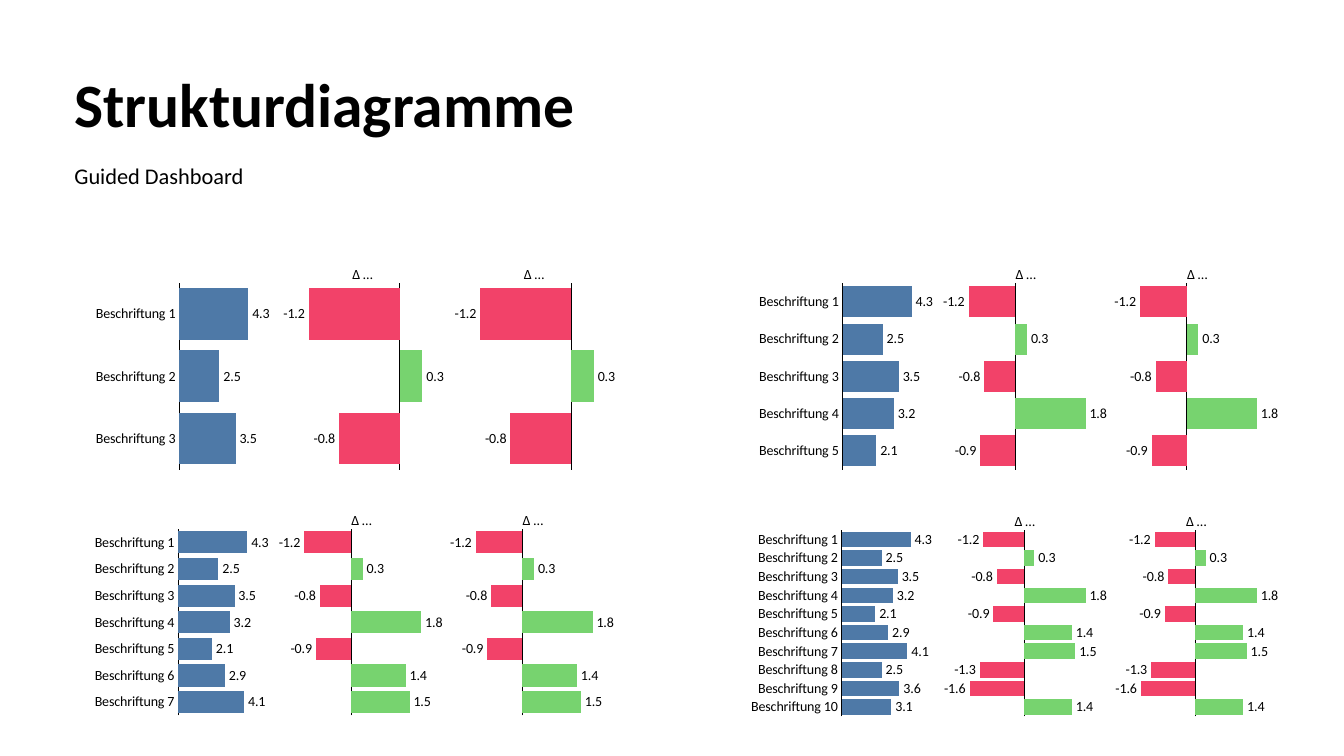
from dataclasses import dataclass

import pptx
import pptx.chart.data
import pptx.dml.color
import pptx.enum.chart
import pptx.enum.text
import pptx.oxml
import pptx.oxml.ns
import pptx.util

COLUMNS, ROWS = 133.33, 75
FONT = "Calibri"
BLACK, BLUE, GREEN, RED = "000000", "4E79A7", "77D36F", "F24269"
VALUES = (4.3, 2.5, 3.5, 3.2, 2.1, 2.9, 4.1, 2.5, 3.6, 3.1)
DELTAS = (-1.2, 0.3, -0.8, 1.8, -0.9, 1.4, 1.5, -1.3, -1.6, 1.4)


@dataclass(frozen=True)
class Heading:
    text: str
    row: float
    height: float
    size: int
    bold: bool
    space_before: int
    anchor: pptx.enum.text.MSO_ANCHOR


@dataclass(frozen=True)
class BarStyle:
    width: float
    plot: dict[str, float]
    label: str
    axis_font: str
    colour: str
    title: str = ""


@dataclass(frozen=True)
class Panel:
    column: float
    row: float
    count: int
    delta_min: float
    delta_max: float


HEADINGS = (
    Heading("Strukturdiagramme", 7.5, 6.4, 44, True, 0, pptx.enum.text.MSO_ANCHOR.MIDDLE),
    Heading("Guided Dashboard", 15.9, 5.9, 16, False, 10, pptx.enum.text.MSO_ANCHOR.TOP),
)
VALUE_BARS = BarStyle(20.8, {"x": 0.543, "y": 0.138, "w": 0.383, "h": 0.797}, "Beschriftung ", FONT, BLUE)
DELTA_BARS = BarStyle(16.6, {"x": 0.092, "y": 0.138, "w": 0.816, "h": 0.797}, "", "Arial", GREEN, "\u00a0∆ …")
TITLE_SPOT = {"x": 0.41, "y": 0.05}
CHART_HEIGHT = 23.2
DELTA_OFFSETS = (21.1, 38.1)
PANELS = (
    Panel(6.5, 24.9, 3, -1.4, 0.4),
    Panel(72.3, 24.9, 5, -1.5, 2),
    Panel(6.4, 49.3, 7, -1.5, 2),
    Panel(72.2, 49.4, 10, -2, 2),
)

prs = pptx.Presentation()
prs.slide_width = pptx.util.Inches(13.33)
prs.slide_height = pptx.util.Inches(7.5)
slide = prs.slides.add_slide(prs.slide_layouts[6])


def x(columns: float) -> int:
    return round(prs.slide_width * columns / COLUMNS)


def y(rows: float) -> int:
    return round(prs.slide_height * rows / ROWS)


def rgb(colour: str) -> pptx.dml.color.RGBColor:
    return pptx.dml.color.RGBColor.from_string(colour)


def set_font(font, size: int, name: str = FONT, bold: bool = False) -> None:
    font.size, font.name, font.bold = pptx.util.Pt(size), name, bold
    font.color.rgb = rgb(BLACK)


def set_fill(fill, colour: str) -> None:
    fill.solid()
    fill.fore_color.rgb = rgb(colour)


def set_layout(parent, index: int, target: str, shares: dict[str, float]) -> None:
    """Place a chart part by shares of the chart's size."""
    for old in parent.findall(pptx.oxml.ns.qn("c:layout")):
        parent.remove(old)
    parts = f'<c:layoutTarget val="{target}"/>' if target else ""
    parts += "".join(f'<c:{k}Mode val="edge"/>' for k in "xy")
    parts += "".join(f'<c:{k} val="{v}"/>' for k, v in shares.items())
    parent.insert(index, pptx.oxml.parse_xml(
        f'<c:layout {pptx.oxml.ns.nsdecls("c")}><c:manualLayout>{parts}</c:manualLayout></c:layout>'))


def add_heading(heading: Heading) -> None:
    sp = slide.shapes.add_textbox(x(6.4), y(heading.row), x(115), y(heading.height))
    tf = sp.text_frame
    tf.word_wrap = True
    tf.vertical_anchor = heading.anchor
    tf.text = heading.text
    p = tf.paragraphs[0]
    p.line_spacing = 0.9
    p.space_before = pptx.util.Pt(heading.space_before)
    set_font(p.runs[0].font, heading.size, bold=heading.bold)


def add_bars(style: BarStyle, column: float, row: float, values: tuple[float, ...],
             low: float, high: float) -> None:
    data = pptx.chart.data.CategoryChartData(number_format="#,##0.0")
    data.categories = [f"{style.label}{i + 1}" for i in range(len(values))]
    data.add_series("Series 1", values)
    chart = slide.shapes.add_chart(
        pptx.enum.chart.XL_CHART_TYPE.BAR_CLUSTERED,
        x(column), y(row), x(style.width), y(CHART_HEIGHT), data).chart
    set_font(chart.font, 10)
    chart.has_legend = False
    chart.has_title = bool(style.title)
    if style.title:
        tf = chart.chart_title.text_frame
        tf.text = style.title
        set_font(tf.paragraphs[0].runs[0].font, 10)
        set_layout(chart.chart_title._element, 1, "", TITLE_SPOT)
    set_layout(chart.element.find(".//" + pptx.oxml.ns.qn("c:plotArea")), 0, "inner", style.plot)

    axis = chart.category_axis
    axis.reverse_order = True
    axis.major_tick_mark = axis.minor_tick_mark = pptx.enum.chart.XL_TICK_MARK.NONE
    axis.format.line.width = pptx.util.Pt(0.75)
    axis.format.line.color.rgb = rgb(BLACK)
    set_font(axis.tick_labels.font, 10, style.axis_font)
    if not style.label:
        axis.tick_label_position = pptx.enum.chart.XL_TICK_LABEL_POSITION.NONE
    scale = chart.value_axis
    scale.has_major_gridlines = False
    scale.minimum_scale, scale.maximum_scale = low, high
    scale.visible = False

    plot = chart.plots[0]
    plot.gap_width = 20
    plot.vary_by_categories = False
    series = plot.series[0]
    series.invert_if_negative = False
    set_fill(series.format.fill, style.colour)
    for i, value in enumerate(values):
        if value < 0:
            set_fill(series.points[i].format.fill, RED)
    labels = series.data_labels
    labels.show_value = True
    labels.number_format = "#,##0.0"
    labels.number_format_is_linked = False
    labels.position = pptx.enum.chart.XL_LABEL_POSITION.OUTSIDE_END
    set_font(labels.font, 10)


def add_panel(panel: Panel) -> None:
    add_bars(VALUE_BARS, panel.column, panel.row, VALUES[:panel.count], 0, 5)
    for offset in DELTA_OFFSETS:
        add_bars(DELTA_BARS, panel.column + offset, panel.row, DELTAS[:panel.count],
                 panel.delta_min, panel.delta_max)


def main() -> None:
    for heading in HEADINGS:
        add_heading(heading)
    for panel in PANELS:
        add_panel(panel)
    prs.save("out.pptx")


if __name__ == "__main__":
    main()
